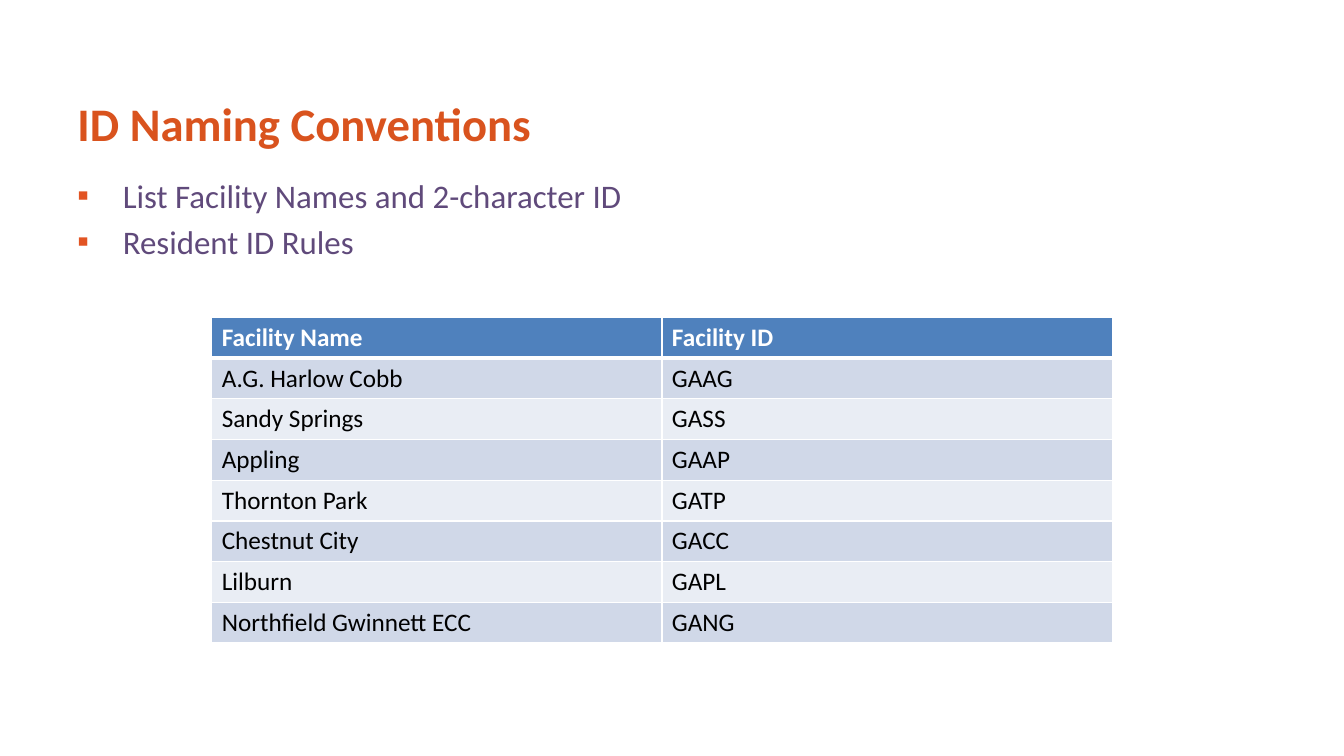
from lxml.etree import SubElement
from pptx import Presentation
from pptx.dml.color import RGBColor
from pptx.enum.text import MSO_ANCHOR
from pptx.oxml import parse_xml
from pptx.oxml.ns import nsdecls, qn
from pptx.util import Inches, Pt

FONT = "Calibri"
ORANGE = RGBColor(0xD9, 0x53, 0x1E)
BULLET_ORANGE = RGBColor(0xE2, 0x54, 0x23)
PURPLE = RGBColor(0x60, 0x4A, 0x7B)
HEADER_BLUE = RGBColor(0x4F, 0x81, 0xBD)
BAND_DARK = RGBColor(0xD0, 0xD8, 0xE8)
BAND_LIGHT = RGBColor(0xE9, 0xED, 0xF4)
WHITE = RGBColor(0xFF, 0xFF, 0xFF)
BLACK = RGBColor(0x00, 0x00, 0x00)

TITLE = "ID Naming Conventions"
TOPICS = ["List Facility Names and 2-character ID", "Resident ID Rules"]
FACILITIES = [
    ("Facility Name", "Facility ID"),
    ("A.G. Harlow Cobb", "GAAG"),
    ("Sandy Springs", "GASS"),
    ("Appling", "GAAP"),
    ("Thornton Park", "GATP"),
    ("Chestnut City", "GACC"),
    ("Lilburn", "GAPL"),
    ("Northfield Gwinnett ECC", "GANG"),
]


def write(paragraph, text, *, size, color, bold=False):
    run = paragraph.add_run()
    run.text = text
    run.font.name = FONT
    run.font.size = Pt(size)
    run.font.bold = bold
    run.font.color.rgb = color


def add_text_frame(slide, box, anchor):
    frame = slide.shapes.add_textbox(*box).text_frame
    frame.word_wrap = True
    frame.vertical_anchor = anchor
    return frame


def add_title(slide, box):
    paragraph = add_text_frame(slide, box, MSO_ANCHOR.BOTTOM).paragraphs[0]
    paragraph.line_spacing = Pt(35.7)
    write(paragraph, TITLE, size=33.3, color=ORANGE, bold=True)


def set_bullet(paragraph):
    properties = paragraph._p.get_or_add_pPr()
    indent = Inches(0.45)
    properties.set("marL", str(indent))
    properties.set("indent", str(-indent))
    bullet_color = SubElement(properties, qn("a:buClr"))
    SubElement(bullet_color, qn("a:srgbClr"), val=str(BULLET_ORANGE))
    SubElement(properties, qn("a:buFont"), typeface=FONT)
    SubElement(properties, qn("a:buChar"), char="▪")


def add_topics(slide, box):
    frame = add_text_frame(slide, box, MSO_ANCHOR.TOP)
    for index, topic in enumerate(TOPICS):
        paragraph = frame.add_paragraph() if index else frame.paragraphs[0]
        set_bullet(paragraph)
        if index:
            paragraph.space_before = Pt(4.7)
        write(paragraph, topic, size=23.5, color=PURPLE)


def set_borders(cell, top, bottom):
    """Draw white cell borders; top and bottom widths are in points."""
    properties = cell._tc.get_or_add_tcPr()
    widths = {"lnL": 1, "lnR": 1, "lnT": top, "lnB": bottom}
    for position, (side, width) in enumerate(widths.items()):
        properties.insert(position, parse_xml(
            f'<a:{side} {nsdecls("a")} w="{Pt(width)}"><a:solidFill>'
            f'<a:srgbClr val="{WHITE}"/></a:solidFill></a:{side}>'))


def add_facility_table(slide, box):
    rows, columns = len(FACILITIES), len(FACILITIES[0])
    table = slide.shapes.add_table(rows, columns, *box).table
    for row, facility in enumerate(FACILITIES):
        header = row == 0
        band = BAND_DARK if row % 2 else BAND_LIGHT
        for column, text in enumerate(facility):
            cell = table.cell(row, column)
            cell.fill.solid()
            cell.fill.fore_color.rgb = HEADER_BLUE if header else band
            set_borders(cell, top=3 if row == 1 else 1, bottom=3 if header else 1)
            write(cell.text_frame.paragraphs[0], text, size=18,
                  color=WHITE if header else BLACK, bold=header)


def main():
    presentation = Presentation()
    presentation.slide_width = Inches(13.33)
    presentation.slide_height = Inches(7.5)
    slide = presentation.slides.add_slide(presentation.slide_layouts[6])
    left, width = Inches(0.67), Inches(12)
    add_title(slide, (left, Inches(0.3), width, Inches(1.25)))
    add_topics(slide, (left, Inches(1.69), width, Inches(4.87)))
    add_facility_table(
        slide, (Inches(2.1), Inches(3.15), Inches(8.93), Inches(3.23)))
    presentation.save("out.pptx")


if __name__ == "__main__":
    main()
